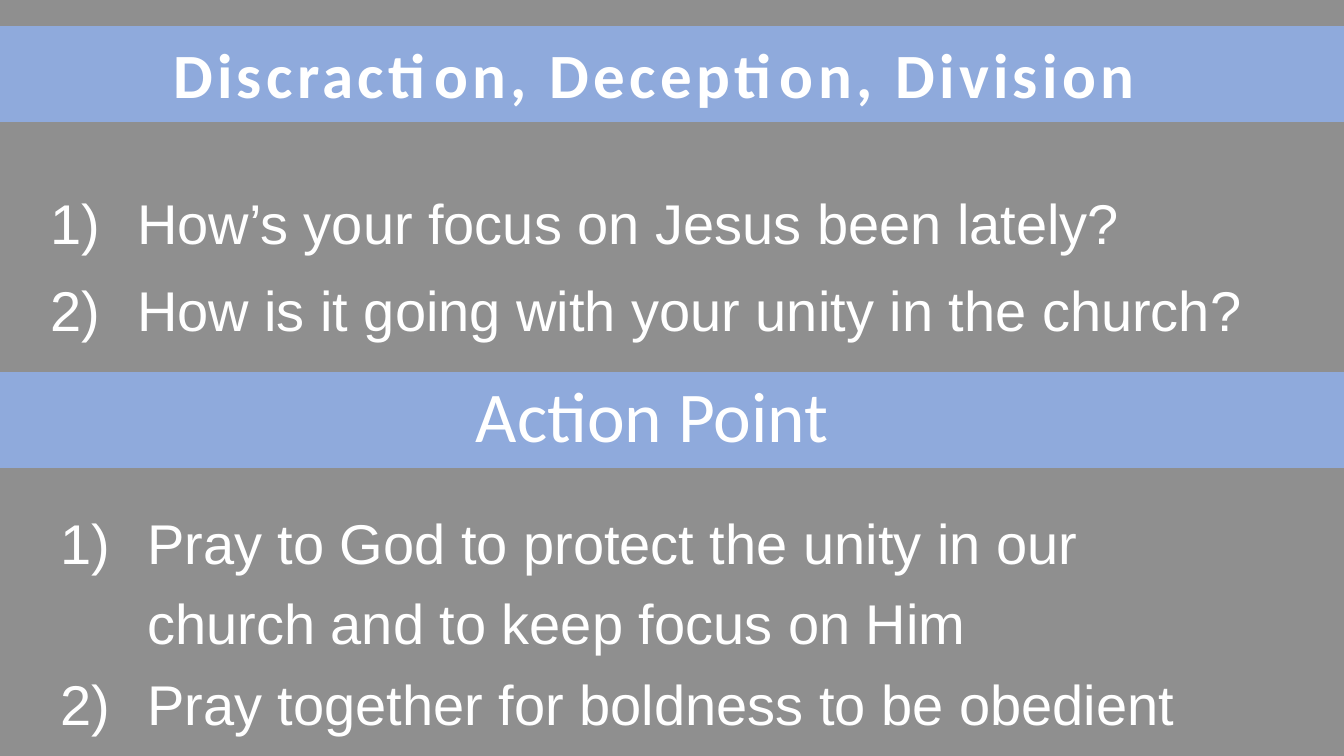
from dataclasses import dataclass

import lxml.etree
import pptx
import pptx.dml.color
import pptx.enum.shapes
import pptx.enum.text
import pptx.oxml.ns
import pptx.util
from pptx.util import Inches

WHITE = pptx.dml.color.RGBColor(0xFF, 0xFF, 0xFF)
SHADE = pptx.dml.color.RGBColor(0x0D, 0x0D, 0x0D)
BLUE = pptx.dml.color.RGBColor(0x8F, 0xAA, 0xDC)
ANCHOR = pptx.enum.text.MSO_ANCHOR
ALIGN = pptx.enum.text.PP_ALIGN
INDENT = Inches(0.86)
SLIDE_W = 13.33


@dataclass
class Box:
    left: float
    top: float
    width: float
    height: float

    def lengths(self) -> list:
        return [Inches(v) for v in (self.left, self.top, self.width, self.height)]


@dataclass
class TextBlock:
    box: Box
    lines: list
    font: dict
    spacing: float = 1.0
    anchor: ANCHOR = ANCHOR.TOP
    numbered: bool = False
    tracking: int = 0


def set_all(obj, values: dict) -> None:
    for name, value in values.items():
        setattr(obj, name, value)


def add_rect(s, box: Box, color, alpha: int = 100, outlined: bool = True) -> None:
    sp = s.shapes.add_shape(pptx.enum.shapes.MSO_SHAPE.RECTANGLE, *box.lengths())
    sp.shadow.inherit = False
    sp.fill.solid()
    sp.fill.fore_color.rgb = color
    if alpha < 100:
        clr = sp._element.spPr.find(".//" + pptx.oxml.ns.qn("a:srgbClr"))
        lxml.etree.SubElement(clr, pptx.oxml.ns.qn("a:alpha"), val=str(alpha * 1000))
    if outlined:
        sp.line.color.rgb = color
        sp.line.width = pptx.util.Pt(2)
    else:
        sp.line.fill.background()


def number_paragraph(p) -> None:
    """Give a paragraph a hanging indent and a "1)" style number."""
    pPr = p._p.get_or_add_pPr()
    pPr.set("marL", str(INDENT))
    pPr.set("indent", str(-INDENT))
    for tag, key, value in (("a:buFont", "typeface", "+mj-lt"),
                            ("a:buAutoNum", "type", "arabicParenR")):
        lxml.etree.SubElement(pPr, pptx.oxml.ns.qn(tag), {key: value})


def write_block(s, sp, block: TextBlock) -> None:
    """Place a text shape in front of the rest and fill it."""
    s.shapes._spTree.append(sp._element)
    set_all(sp, dict(zip(("left", "top", "width", "height"), block.box.lengths())))
    tf = sp.text_frame
    margins = dict.fromkeys(
        ("margin_left", "margin_top", "margin_right", "margin_bottom"), Inches(0.05))
    set_all(tf, {"word_wrap": True, "auto_size": pptx.enum.text.MSO_AUTO_SIZE.NONE,
                 "vertical_anchor": block.anchor, **margins})
    for i, line in enumerate(block.lines):
        p = tf.paragraphs[0] if i == 0 else tf.add_paragraph()
        set_all(p, {"line_spacing": block.spacing, "space_before": pptx.util.Pt(0),
                    "alignment": ALIGN.LEFT if block.numbered else ALIGN.CENTER})
        if block.numbered:
            number_paragraph(p)
        r = p.add_run()
        r.text = line
        set_all(r.font, block.font)
        r.font.color.rgb = WHITE
        if block.tracking:
            r._r.get_or_add_rPr().set("spc", str(block.tracking))


LIST_FONT = {"name": "Arial", "size": pptx.util.Pt(40)}
HEADING = TextBlock(
    Box(0.59, 0.3, 11.8, 0.85), ["Discraction, Deception, Division"],
    {"name": "Calibri", "size": pptx.util.Pt(45), "bold": True}, tracking=310)
QUESTIONS = TextBlock(
    Box(0.45, 1.62, 12.04, 1.51),
    ["How’s your focus on Jesus been lately?",
     "How is it going with your unity in the church?"],
    LIST_FONT, spacing=1.3, numbered=True)
ACTION_HEADING = TextBlock(
    Box(0.72, 3.29, 11.5, 1.74), ["Action Point"],
    {"name": "Calibri", "size": pptx.util.Pt(51)}, spacing=0.9, anchor=ANCHOR.MIDDLE)
ACTIONS = TextBlock(
    Box(0.55, 4.86, 11.82, 2.2),
    ["Pray to God to protect the unity in our church and to keep focus on Him",
     "Pray together for boldness to be obedient"],
    LIST_FONT, spacing=1.2, numbered=True)


def main() -> None:
    prs = pptx.Presentation()
    prs.slide_width, prs.slide_height = Inches(SLIDE_W), Inches(7.5)
    s = prs.slides.add_slide(prs.slide_layouts.get_by_name("Two Content"))
    title, questions, actions = list(s.placeholders)[:3]

    add_rect(s, Box(-0.14, -0.13, 13.57, 8.19), SHADE, alpha=46, outlined=False)
    for top in (0.27, 3.7):
        add_rect(s, Box(0, top, SLIDE_W, 0.93), BLUE)

    write_block(s, title, HEADING)
    write_block(s, questions, QUESTIONS)
    write_block(s, s.shapes.add_textbox(0, 0, 0, 0), ACTION_HEADING)
    write_block(s, actions, ACTIONS)
    prs.save("out.pptx")


if __name__ == "__main__":
    main()
